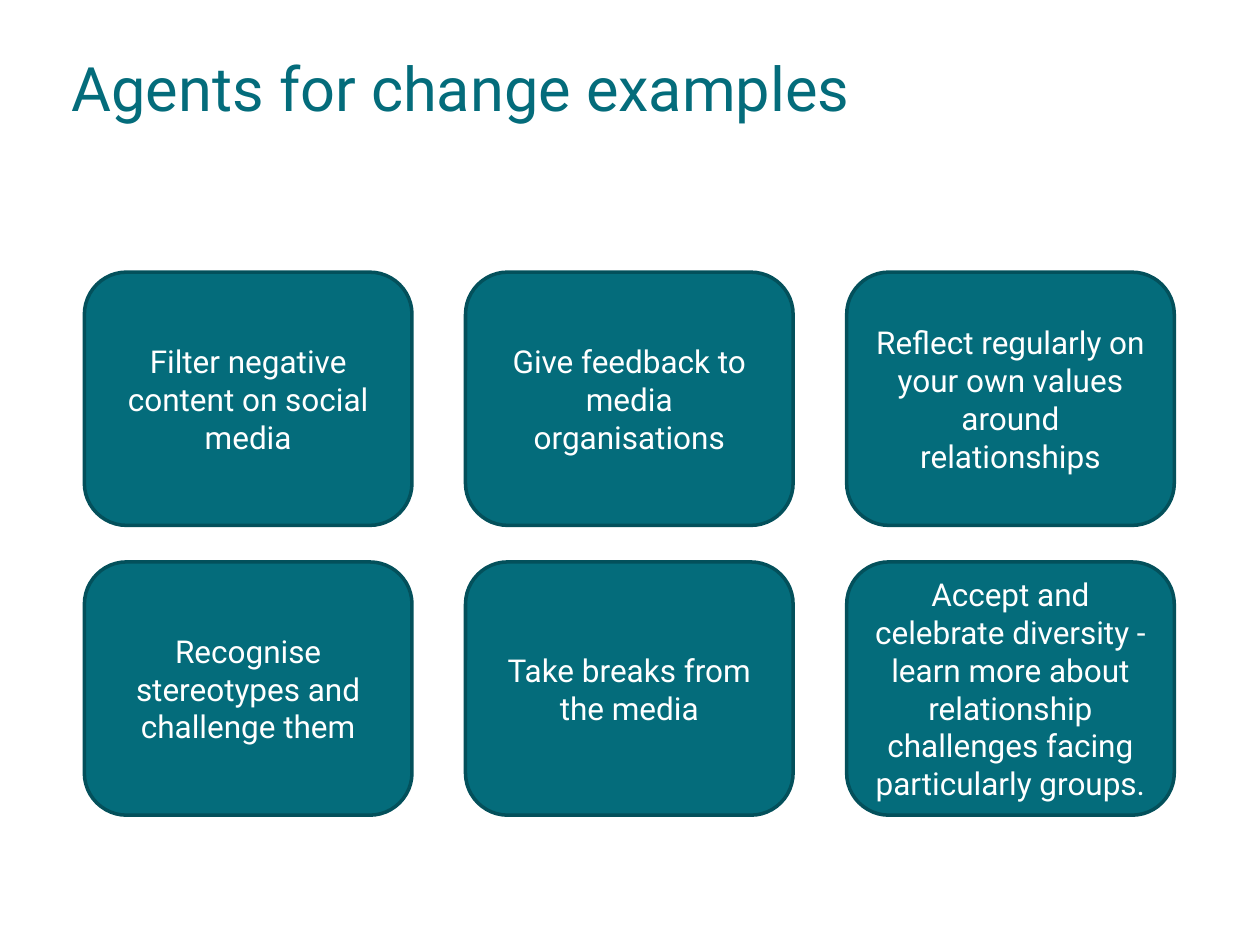
from dataclasses import dataclass

from pptx import Presentation
from pptx.dml.color import RGBColor
from pptx.enum.shapes import MSO_SHAPE
from pptx.enum.text import MSO_ANCHOR, PP_ALIGN
from pptx.util import Inches, Pt

ROUNDED = MSO_SHAPE.ROUNDED_RECTANGLE
MIDDLE, TOP = MSO_ANCHOR.MIDDLE, MSO_ANCHOR.TOP
CENTER, LEFT = PP_ALIGN.CENTER, PP_ALIGN.LEFT

FONT = "Roboto"
COLORS = {"teal": "046C7B", "outline": "03505B", "white": "FFFFFF"}

# Card grid, in inches
GRID_LEFT, GRID_TOP = 0.67, 2.16
CARD_W, CARD_H = 2.6, 2.01
COL_STEP, ROW_STEP = 3.025, 2.3


@dataclass
class Card:
    col: int
    row: int
    text: str


CARDS = [
    Card(0, 0, "Filter negative content on social media"),
    Card(1, 0, "Give feedback to media organisations"),
    Card(2, 0, "Reflect regularly on your own values around relationships"),
    Card(0, 1, "Recognise stereotypes and challenge them"),
    Card(1, 1, "Take breaks from the media"),
    Card(2, 1, "Accept and celebrate diversity - learn more about relationship "
               "challenges facing particularly groups."),
]


def rgb(name: str) -> RGBColor:
    return RGBColor.from_string(COLORS[name])


def write(sp, text: str, size: float, color: str, align, anchor) -> None:
    tf = sp.text_frame
    tf.text = text
    tf.word_wrap = True
    tf.vertical_anchor = anchor
    p = tf.paragraphs[0]
    p.alignment = align
    font = p.runs[0].font
    font.name, font.size = FONT, Pt(size)
    font.color.rgb = rgb(color)


def add_title(s, text: str) -> None:
    sp = s.shapes.add_textbox(Inches(0.47), Inches(0.3), Inches(9.03), Inches(1.14))
    sp.text_frame.margin_top = Inches(0.1)
    write(sp, text, 35, "teal", LEFT, TOP)


def add_card(s, card: Card) -> None:
    sp = s.shapes.add_shape(
        ROUNDED,
        Inches(GRID_LEFT + card.col * COL_STEP),
        Inches(GRID_TOP + card.row * ROW_STEP),
        Inches(CARD_W), Inches(CARD_H))
    sp.shadow.inherit = False
    sp.fill.solid()
    sp.fill.fore_color.rgb = rgb("teal")
    sp.line.color.rgb = rgb("outline")
    sp.line.width = Pt(2)
    write(sp, card.text, 18, "white", CENTER, MIDDLE)


def main() -> None:
    prs = Presentation()
    prs.slide_width, prs.slide_height = Inches(10), Inches(7.5)
    s = prs.slides.add_slide(prs.slide_layouts[6])
    add_title(s, "Agents for change examples")
    for card in CARDS:
        add_card(s, card)
    prs.save("out.pptx")


if __name__ == "__main__":
    main()
